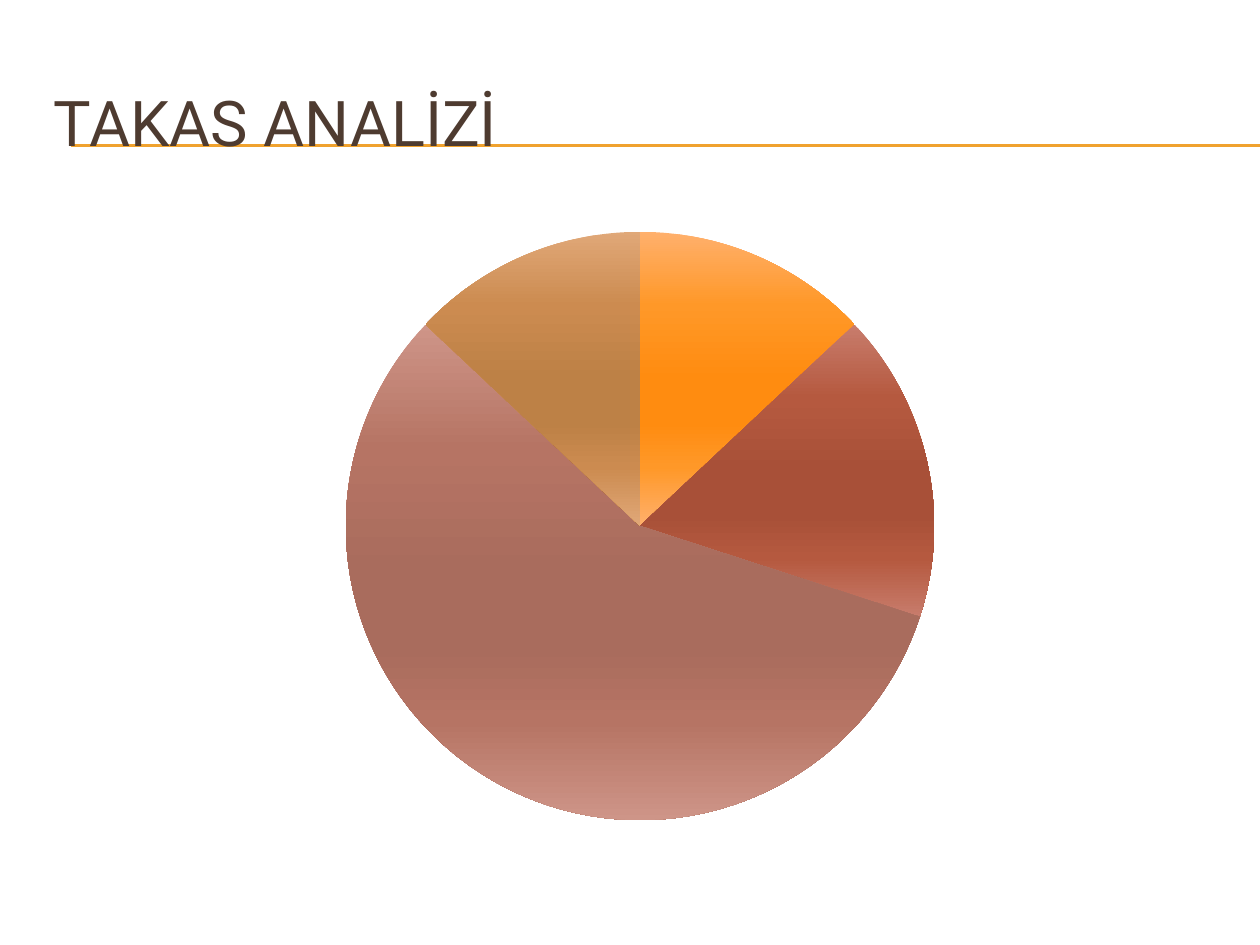
from lxml import etree
from pptx import Presentation
from pptx import util as u
from pptx.chart import data
from pptx.dml import color
from pptx.enum import chart as charts, shapes, text
from pptx.oxml import ns

SLICES = [
    ("1", 13, ("FFB06C", "FF9828", "FF8C10")),
    ("2", 17, ("C87C6C", "B5593F", "A85038")),
    ("3", 57, ("CE9588", "B67464", "A96C5D")),
    ("4", 13, ("E0A878", "CC8B50", "BD8146")),
]
GRADIENT_STOPS = [(0, 0), (25, 1), (50, 2), (65, 2), (80, 1), (100, 0)]
PIE_DIAMETER = 4.67


def rgb(value):
    """Return the colour for a hex string."""
    return color.RGBColor.from_string(value)


def apply_format(target, values):
    """Set each named attribute on the target."""
    for name, value in values.items():
        setattr(target, name, value)


def add_rule(slide, left, top, width):
    """Draw a thin horizontal rule."""
    start, end, height = u.Inches(left), u.Inches(left + width), u.Inches(top)
    rule = slide.shapes.add_connector(
        shapes.MSO_CONNECTOR.STRAIGHT, start, height, end, height)
    rule.line.color.rgb = rgb("F0A22E")
    rule.line.width = u.Pt(0.75)
    etree.SubElement(rule.element.spPr, ns.qn("a:effectLst"))


def add_title(slide, left, top, width, height, wording):
    """Place the slide title in its box."""
    title = slide.shapes.add_textbox(*map(u.Inches, (left, top, width, height)))
    apply_format(title.text_frame, {
        "word_wrap": True, "vertical_anchor": text.MSO_ANCHOR.MIDDLE})
    run = title.text_frame.paragraphs[0].add_run()
    run.text = wording
    apply_format(run.font, {"name": "Roboto", "size": u.Pt(36)})
    run.font.color.rgb = rgb("4E3B30")


def shade_slice(point, shades):
    """Fill a slice with a vertical gradient and hide its outline."""
    fill = point.format.fill
    fill.gradient()
    fill.gradient_angle = 270
    stop_list = next(point.format._element.iter(ns.qn("a:gsLst")))
    for stop in list(stop_list):
        stop_list.remove(stop)
    for position, shade in GRADIENT_STOPS:
        stop = etree.SubElement(stop_list, ns.qn("a:gs"), pos=str(position * 1000))
        etree.SubElement(stop, ns.qn("a:srgbClr"), val=shades[shade])
    point.format.line.fill.background()


def set_plot_layout(chart, width, height):
    """Centre a pie of fixed diameter inside the chart box."""
    plot_area = chart.plots[0]._element.getparent()
    for old in plot_area.findall(ns.qn("c:layout")):
        plot_area.remove(old)
    layout = etree.Element(ns.qn("c:layout"))
    plot_area.insert(0, layout)
    manual = etree.SubElement(layout, ns.qn("c:manualLayout"))
    share_x, share_y = PIE_DIAMETER / width, PIE_DIAMETER / height
    settings = {
        "layoutTarget": "inner", "xMode": "edge", "yMode": "edge",
        "x": (1 - share_x) / 2, "y": (1 - share_y) / 2,
        "w": share_x, "h": share_y}
    for name, value in settings.items():
        etree.SubElement(manual, ns.qn(f"c:{name}"), val=str(value))


def add_pie(slide, left, top, width, height):
    """Place the pie chart in its box."""
    chart_data = data.CategoryChartData()
    chart_data.categories = [name for name, _, _ in SLICES]
    chart_data.add_series("Series 1", [value for _, value, _ in SLICES])
    frame = slide.shapes.add_chart(
        charts.XL_CHART_TYPE.PIE,
        *map(u.Inches, (left, top, width, height)), chart_data)
    chart = frame.chart
    apply_format(chart, {"has_legend": False, "has_title": False})
    apply_format(chart.font, {"name": "Roboto", "size": u.Pt(18)})
    chart.font.color.rgb = rgb("000000")
    plot = chart.plots[0]
    plot.vary_by_categories = True
    for index, (_, _, shades) in enumerate(SLICES):
        shade_slice(plot.series[0].points[index], shades)
    set_plot_layout(chart, width, height)


def main():
    """Build and save the presentation."""
    presentation = Presentation()
    apply_format(presentation, {
        "slide_width": u.Inches(10), "slide_height": u.Inches(7.5)})
    slide = presentation.slides.add_slide(presentation.slide_layouts[6])
    for top in (1.15, 1.16):
        add_rule(slide, 0.56, top, 9.44)
    add_title(slide, 0.33, 0.5, 9.5, 0.92, "TAKAS ANALİZİ")
    add_pie(slide, 0.33, 1.7, 9.5, 4.95)
    presentation.save("out.pptx")


if __name__ == "__main__":
    main()
